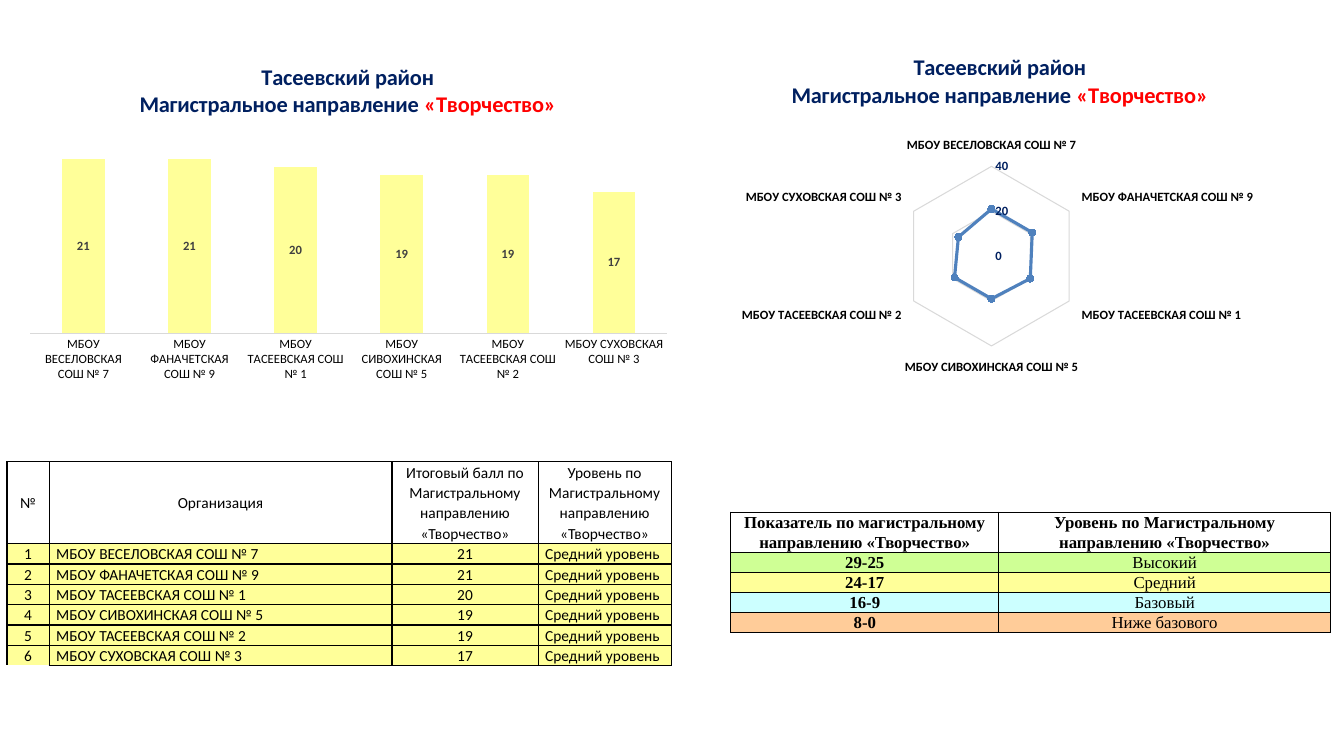
from dataclasses import dataclass

from pptx import Presentation
from pptx.chart.data import CategoryChartData
from pptx.dml.color import RGBColor
from pptx.enum.chart import XL_CHART_TYPE as ChartType, XL_MARKER_STYLE as Marker
from pptx.enum.chart import XL_TICK_MARK as TickMark
from pptx.enum.text import MSO_ANCHOR as Anchor, PP_ALIGN as Align
from pptx.oxml import parse_xml
from pptx.oxml.ns import nsdecls, qn
from pptx.util import Pt


@dataclass(frozen=True)
class Theme:
    sans: str = "Calibri"
    serif: str = "Times New Roman"
    black: str = "000000"
    navy: str = "002060"
    red: str = "FF0000"
    blue: str = "4F81BD"
    grid: str = "D9D9D9"
    label: str = "404040"
    high: str = "CFFF95"
    middle: str = "FFFF99"
    basic: str = "CCFFFF"
    low: str = "FFCC99"
    title_size: int = 16
    chart_size: int = 10
    axis_size: int = 9
    schools_size: int = 11
    levels_size: int = 12


class ReportSlide:
    def __init__(self, presentation, theme):
        self.slide = presentation.slides.add_slide(presentation.slide_layouts[6])
        self.theme = theme

    def style(self, font, size, color, bold=False, name=None):
        font.name = name or self.theme.sans
        font.size = Pt(size)
        font.bold = bold
        font.color.rgb = RGBColor.from_string(color)

    def line(self, line_format, color, width):
        line_format.color.rgb = RGBColor.from_string(color)
        line_format.width = Pt(width)

    def layout(self, parent, index, **places):
        """Place a chart part by fractions of the chart area."""
        for old in parent.findall(qn("c:layout")):
            parent.remove(old)
        target = '<c:layoutTarget val="inner"/>' if "w" in places else ""
        modes = "".join(f'<c:{key}Mode val="edge"/>' for key in places if key in "xy")
        values = "".join(f'<c:{key} val="{value}"/>' for key, value in places.items())
        parent.insert(index, parse_xml(
            f'<c:layout {nsdecls("c")}><c:manualLayout>{target}{modes}{values}'
            "</c:manualLayout></c:layout>"))

    def chart(self, kind, box, schools, scores, title, title_at, plot_at):
        theme = self.theme
        data = CategoryChartData()
        data.categories = schools
        data.add_series("Series 1", scores)
        chart = self.slide.shapes.add_chart(kind, *map(Pt, box), data).chart
        chart.has_legend = False
        self.style(chart.font, theme.chart_size, theme.black)

        # Two-line title with a highlighted last word
        frame = chart.chart_title.text_frame
        for number, runs in enumerate(title):
            paragraph = frame.add_paragraph() if number else frame.paragraphs[0]
            self.style(paragraph.font, theme.title_size, theme.navy, bold=True)
            for text, color in runs:
                run = paragraph.add_run()
                run.text = text
                self.style(run.font, theme.title_size, color, bold=True)
        self.layout(chart.chart_title._element, 1, **title_at)
        self.layout(chart._chartSpace.chart.plotArea, 0, **plot_at)

        chart.plots[0].vary_by_categories = False
        chart.category_axis.major_tick_mark = TickMark.NONE
        chart.category_axis.has_major_gridlines = False
        return chart

    def column_chart(self, *content):
        theme = self.theme
        chart = self.chart(ChartType.COLUMN_STACKED, *content)
        self.style(chart.category_axis.tick_labels.font, theme.axis_size, theme.black)
        self.line(chart.category_axis.format.line, theme.grid, 1)
        score_axis = chart.value_axis
        score_axis.visible = False
        score_axis.has_major_gridlines = False
        score_axis.minimum_scale, score_axis.maximum_scale = 0, 25

        plot = chart.plots[0]
        plot.gap_width, plot.overlap = 150, 100
        columns = plot.series[0]
        columns.format.fill.solid()
        columns.format.fill.fore_color.rgb = RGBColor.from_string(theme.middle)
        columns.data_labels.show_value = True
        self.style(columns.data_labels.font, theme.axis_size, theme.label, bold=True)

    def radar_chart(self, *content):
        theme = self.theme
        chart = self.chart(ChartType.RADAR_MARKERS, *content)
        self.style(chart.category_axis.tick_labels.font, theme.axis_size, theme.black, bold=True)
        self.line(chart.category_axis.format.line, theme.grid, 0.75)
        score_axis = chart.value_axis
        score_axis.major_tick_mark = TickMark.NONE
        score_axis.minimum_scale, score_axis.maximum_scale = 0, 40
        score_axis.major_unit = 20
        score_axis.format.line.fill.background()
        self.line(score_axis.major_gridlines.format.line, theme.grid, 0.75)
        self.style(score_axis.tick_labels.font, theme.axis_size, theme.navy, bold=True)

        outline = chart.plots[0].series[0]
        outline.smooth = False
        self.line(outline.format.line, theme.blue, 2.25)
        outline.marker.style, outline.marker.size = Marker.CIRCLE, 5
        outline.marker.format.fill.solid()
        outline.marker.format.fill.fore_color.rgb = RGBColor.from_string(theme.blue)
        self.line(outline.marker.format.line, theme.blue, 0.75)

    def table(self, left, top, widths, heights, rows):
        shape = self.slide.shapes.add_table(
            len(rows), len(widths), Pt(left), Pt(top), Pt(sum(widths)), Pt(sum(heights)))
        table = shape.table
        table.first_row = table.horz_banding = False
        for column, width in zip(table.columns, widths):
            column.width = Pt(width)
        for row, height in zip(table.rows, heights):
            row.height = Pt(height)
        return table

    def cell(self, cell, text, size, name=None, bold=False, fill=None,
             align=Align.CENTER, anchor=Anchor.MIDDLE, sides="LRTB"):
        cell.margin_left = cell.margin_right = Pt(5)
        cell.margin_top = cell.margin_bottom = 0
        cell.vertical_anchor = anchor
        cell.text = text
        paragraph = cell.text_frame.paragraphs[0]
        paragraph.alignment = align
        paragraph.line_spacing = 1.07
        self.style(paragraph.font, size, self.theme.black, bold, name)
        properties = cell._tc.get_or_add_tcPr()
        for side in sides:
            properties.append(parse_xml(
                f'<a:ln{side} {nsdecls("a")} w="{Pt(1)}"><a:solidFill>'
                f'<a:srgbClr val="{self.theme.black}"/></a:solidFill></a:ln{side}>'))
        if fill:
            cell.fill.solid()
            cell.fill.fore_color.rgb = RGBColor.from_string(fill)
        else:
            cell.fill.background()

    def schools_table(self, left, top, widths, heights, rows):
        table = self.table(left, top, widths, heights, rows)
        last = len(rows) - 1
        for r, row in enumerate(rows):
            for c, text in enumerate(row):
                self.cell(table.cell(r, c), text, self.theme.schools_size,
                          fill=self.theme.middle if r else None,
                          align=Align.LEFT if r and c in (1, 3) else Align.CENTER,
                          anchor=Anchor.BOTTOM if r else Anchor.MIDDLE,
                          sides="LRT" if (r, c) == (last, 0) else "LRTB")

    def levels_table(self, left, top, widths, heights, rows):
        table = self.table(left, top, widths, heights, rows)
        for r, (*texts, fill) in enumerate(rows):
            for c, text in enumerate(texts):
                self.cell(table.cell(r, c), text, self.theme.levels_size, self.theme.serif,
                          bold=r == 0 or c == 0, fill=fill,
                          anchor=Anchor.MIDDLE if r else Anchor.TOP)


def main():
    theme = Theme()
    presentation = Presentation()
    presentation.slide_width, presentation.slide_height = Pt(960), Pt(540)
    report = ReportSlide(presentation, theme)

    # Content shared by the charts and the table of schools
    places = [("ВЕСЕЛОВСКАЯ", 7), ("ФАНАЧЕТСКАЯ", 9), ("ТАСЕЕВСКАЯ", 1),
              ("СИВОХИНСКАЯ", 5), ("ТАСЕЕВСКАЯ", 2), ("СУХОВСКАЯ", 3)]
    schools = [f"МБОУ {place} СОШ № {number}" for place, number in places]
    scores = [21, 21, 20, 19, 19, 17]
    title = [[("Тасеевский район", theme.navy)],
             [("Магистральное направление ", theme.navy), ("«Творчество»", theme.red)]]

    # Left half: scores by school
    report.column_chart((12.2, 30.2, 473.8, 247.7), schools, scores, title,
                        dict(x=0.18, y=0.05), dict(x=0.02, y=0.24, w=0.96, h=0.6))
    header = ("№", "Организация", "Итоговый балл по Магистральному направлению «Творчество»",
              "Уровень по Магистральному направлению «Творчество»")
    ranking = [(str(place), school, str(score), "Средний уровень")
               for place, (school, score) in enumerate(zip(schools, scores), 1)]
    report.schools_table(5, 329.8, (30.2, 244.8, 104.4, 95), [58.5] + [14.4] * len(ranking),
                         [header, *ranking])

    # Right half: profile and key to the levels
    report.radar_chart((473, 14.4, 475.2, 263.5), schools, scores, title,
                       dict(x=0.19, y=0.08), dict(x=0.36, y=0.35, w=0.27, h=0.58))
    levels = [("Показатель по магистральному направлению «Творчество»",
               "Уровень по Магистральному направлению «Творчество»", None),
              ("29-25", "Высокий", theme.high),
              ("24-17", "Средний", theme.middle),
              ("16-9", "Базовый", theme.basic),
              ("8-0", "Ниже базового", theme.low)]
    report.levels_table(522, 365.8, (191.5, 236.9), [28.6] + [14.3] * 4, levels)

    presentation.save("out.pptx")


if __name__ == "__main__":
    main()
